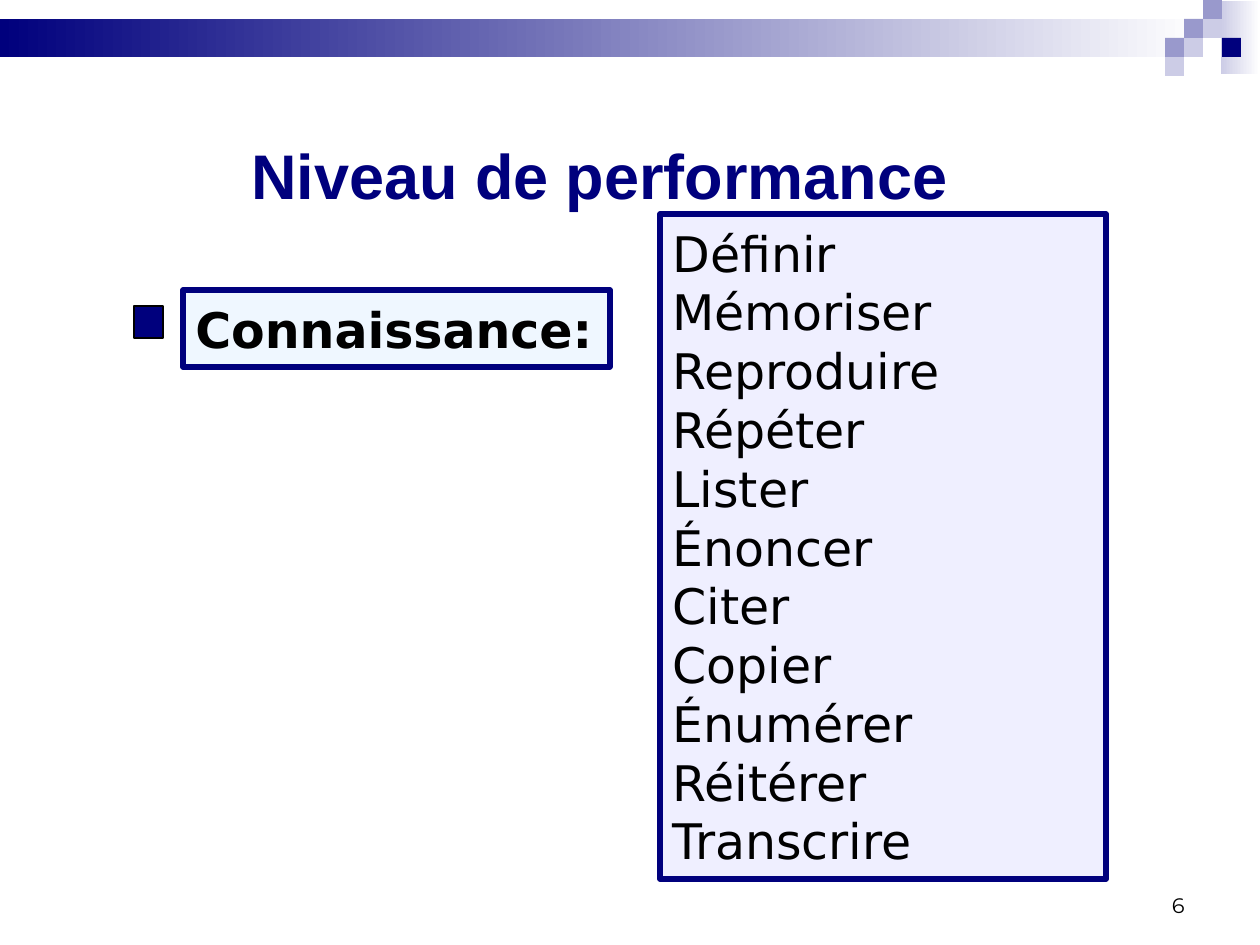
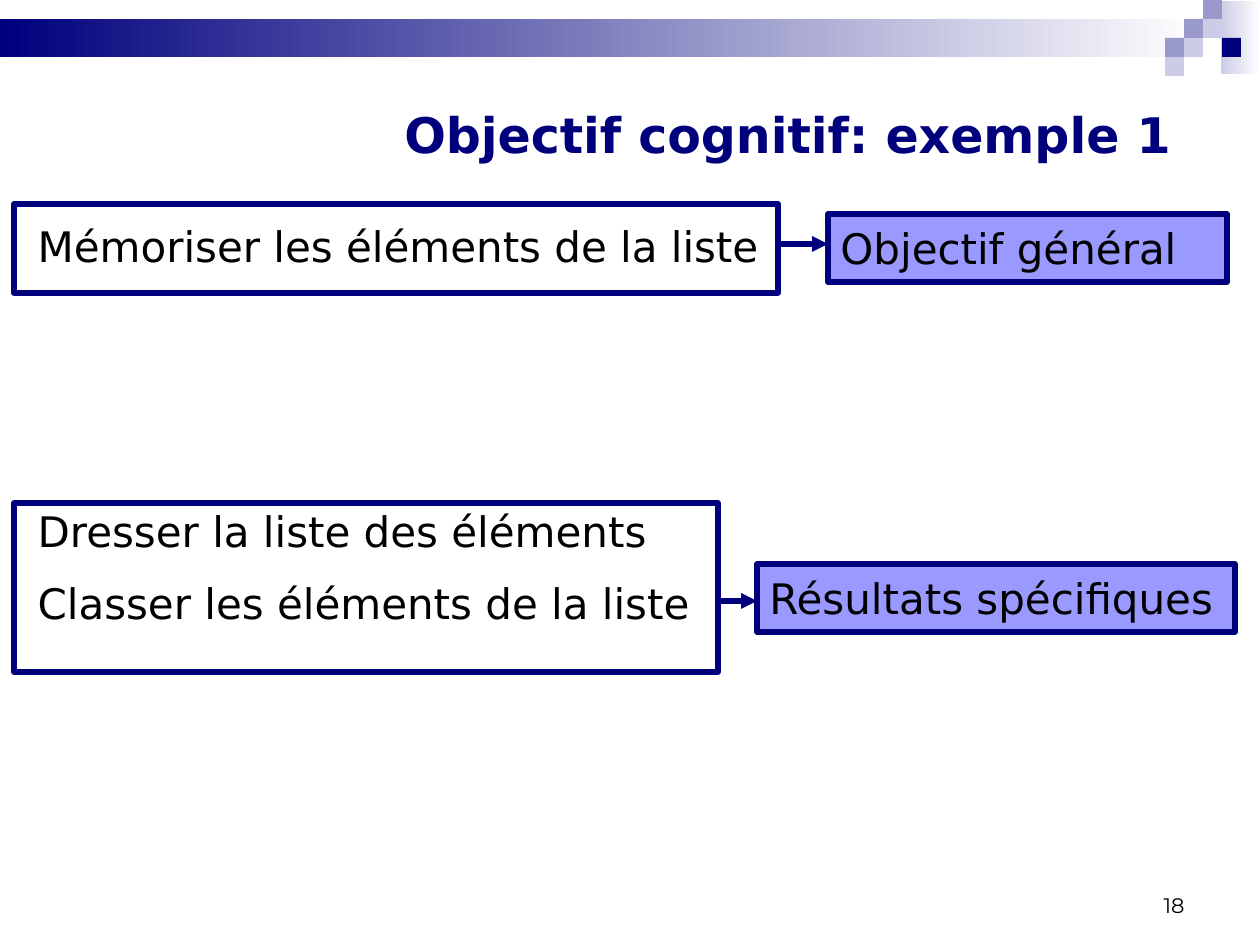
from lxml import etree
from pptx import Presentation
from pptx.dml.color import RGBColor
from pptx.enum.shapes import MSO_CONNECTOR, MSO_SHAPE
from pptx.enum.text import MSO_ANCHOR, MSO_AUTO_SIZE, PP_ALIGN
from pptx.oxml.ns import qn
from pptx.util import Emu, Pt

RECTANGLE, STRAIGHT = MSO_SHAPE.RECTANGLE, MSO_CONNECTOR.STRAIGHT
TOP, MIDDLE, BOTTOM = MSO_ANCHOR.TOP, MSO_ANCHOR.MIDDLE, MSO_ANCHOR.BOTTOM
LEFT, CENTER, RIGHT = PP_ALIGN.LEFT, PP_ALIGN.CENTER, PP_ALIGN.RIGHT

NAVY = RGBColor(0x00, 0x00, 0x7D)
BLACK = RGBColor(0x00, 0x00, 0x00)
WHITE = RGBColor(0xFF, 0xFF, 0xFF)
LAVENDER = RGBColor(0xCC, 0xCC, 0xE6)
MAUVE = RGBColor(0x99, 0x99, 0xCC)
PERIWINKLE = RGBColor(0x99, 0x99, 0xFF)
SKY = RGBColor(0x99, 0xCC, 0xFF)

BODY_FONT = "DejaVu Sans"
EMU_PER_PX = 914400 / 126
PAGE_SIZE = (1260, 945)
NUMBER_AREA = (903, 861, 294, 63)

# Master decoration: gradient bands, then (column, row, colour) mosaic tiles
BANDS = [((1221, 1, 39, 73), LAVENDER), ((0, 19, 1203, 38), NAVY)]
TILE, MOSAIC_LEFT = 19, 1165
TILES = [
    (1, 2, LAVENDER), (0, 3, LAVENDER), (0, 2, MAUVE), (2, 1, LAVENDER),
    (3, 2, NAVY), (1, 1, MAUVE), (2, 0, MAUVE),
]

LEVEL_TITLE = "Niveau de performance"
LEVEL_NAME = "Connaissance:"
LEVEL_VERBS = [
    "Définir", "Mémoriser", "Reproduire", "Répéter", "Lister", "Énoncer",
    "Citer", "Copier", "Énumérer", "Réitérer", "Transcrire",
]

EXAMPLE_TITLE = "Objectif cognitif: exemple 1"
EXAMPLE_LINES = [
    "Mémoriser les éléments de la liste",
    "Dresser la liste des éléments",
    "Classer les éléments de la liste",
]
EXAMPLE_GAPS = [0, 134.4, 12]
# (outline of the example, label, label area, arrow height)
EXAMPLE_LINKS = [
    ((14, 204, 764, 89), "Objectif général", (828, 214, 399, 68), 244),
    ((14, 503, 704, 169), "Résultats spécifiques", (757, 564, 478, 68), 601),
]


def px(length):
    return Emu(round(length * EMU_PER_PX))


def place(box, area):
    box.left, box.top, box.width, box.height = map(px, area)


def paint(box, color=None, line=None, width=3, alpha=None):
    """Set fill and line; alpha is the opacity of the fill in percent."""
    if color is None:
        box.fill.background()
    else:
        box.fill.solid()
        box.fill.fore_color.rgb = color
    if alpha is not None:
        tint = box.element.spPr.find(qn("a:solidFill")).find(qn("a:srgbClr"))
        etree.SubElement(tint, qn("a:alpha"), val=str(alpha * 1000))
    if line is None:
        box.line.fill.background()
    else:
        box.line.color.rgb = line
        box.line.width = Pt(width)


def add_rectangle(shapes, area, color=None, line=None, **style):
    box = shapes.add_shape(RECTANGLE, *map(px, area))
    box.shadow.inherit = False
    paint(box, color, line, **style)
    return box


def write(box, lines, size, font=BODY_FONT, color=BLACK, bold=False,
          align=LEFT, anchor=MIDDLE, wrap=True, gaps=None):
    frame = box.text_frame
    frame.text = "\n".join(lines)
    frame.auto_size = MSO_AUTO_SIZE.NONE
    frame.word_wrap = wrap
    frame.vertical_anchor = anchor
    for para, gap in zip(frame.paragraphs, gaps or [0] * len(lines)):
        props = para._p.get_or_add_pPr()
        props.set("marL", "0")
        props.set("indent", "0")
        etree.SubElement(props, qn("a:buNone"))
        para.alignment = align
        para.space_before = Pt(gap)
        if font == BODY_FONT:
            para.line_spacing = Pt(size * 1.2)
        para.font.name = font
        para.font.size = Pt(size)
        para.font.bold = bold
        para.font.color.rgb = color


def add_arrow(page, start, end, height):
    arrow = page.shapes.add_connector(
        STRAIGHT, px(start), px(height), px(end), px(height))
    arrow.line.color.rgb = NAVY
    arrow.line.width = Pt(3)
    etree.SubElement(arrow.line._get_or_add_ln(), qn("a:tailEnd"), type="triangle")
    etree.SubElement(arrow.element.spPr, qn("a:effectLst"))


def decorate_master(master, page):
    """Draw the bands and mosaic as a group, then hand it to the master."""
    group = page.shapes.add_group_shape()
    for area, color in BANDS:
        band = add_rectangle(group.shapes, area, color)
        band.fill.gradient()
        band.fill.gradient_angle = 0
        for stop, shade in zip(band.fill.gradient_stops, (color, WHITE)):
            stop.color.rgb = shade
    for column, row, color in TILES:
        area = (MOSAIC_LEFT + column * TILE, row * TILE, TILE, TILE)
        add_rectangle(group.shapes, area, color)
    tree = master.shapes.element
    tree.append(group.element)
    for number, props in enumerate(tree.iter(qn("p:cNvPr")), 1):
        props.set("id", str(number))


def add_page(deck, number, title, title_area, **title_style):
    page = deck.slides.add_slide(deck.slide_layouts[1])
    place(page.shapes.title, title_area)
    write(page.shapes.title, [title], color=NAVY, bold=True, align=CENTER,
          **title_style)
    box = page.shapes.add_textbox(*map(px, NUMBER_AREA))
    write(box, [number], 12, font="Montserrat", align=RIGHT, anchor=BOTTOM)
    return page


def build_level(deck):
    page = add_page(deck, "6", LEVEL_TITLE, (64, 125, 1071, 108),
                    size=36, font="Arial")
    page.shapes.title.text_frame.margin_bottom = px(16)

    verbs = page.placeholders[1]
    place(verbs, (660, 214, 446, 665))
    paint(verbs, PERIWINKLE, NAVY, alpha=15)
    write(verbs, LEVEL_VERBS, 28)

    name = add_rectangle(page.shapes, (183, 290, 427, 77), SKY, NAVY, alpha=15)
    write(name, [LEVEL_NAME], 28, bold=True, wrap=False)
    add_rectangle(page.shapes, (134, 306, 29, 32), NAVY, BLACK, width=0.75)
    return page


def build_example(deck):
    page = add_page(deck, "18", EXAMPLE_TITLE, (315, 98, 945, 72), size=28)
    body = page.placeholders[1]
    place(body, (25, 214, 824, 440))
    write(body, EXAMPLE_LINES, 24, anchor=TOP, gaps=EXAMPLE_GAPS)

    for outline, label, label_area, height in EXAMPLE_LINKS:
        add_rectangle(page.shapes, outline, line=NAVY)
        box = add_rectangle(page.shapes, label_area, PERIWINKLE, NAVY)
        write(box, [label], 24)
        add_arrow(page, outline[0] + outline[2], label_area[0], height)


def main():
    deck = Presentation()
    deck.slide_width, deck.slide_height = map(px, PAGE_SIZE)
    first_page = build_level(deck)
    decorate_master(deck.slide_master, first_page)
    build_example(deck)
    deck.save("out.pptx")


if __name__ == "__main__":
    main()
